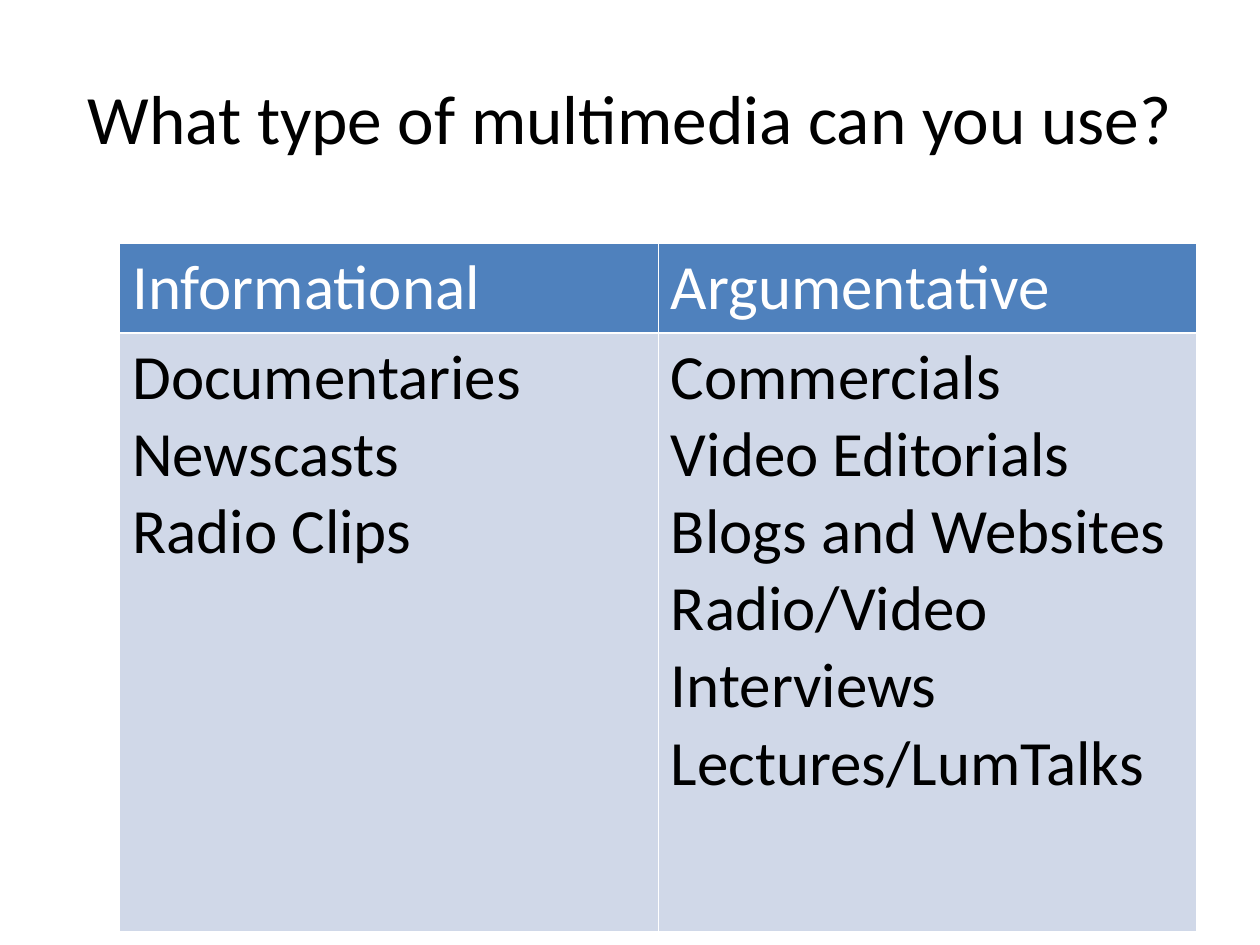
from pptx import Presentation
from pptx.dml.color import RGBColor
from pptx.enum.text import MSO_ANCHOR, PP_ALIGN
from pptx.util import Pt

CENTER = PP_ALIGN.CENTER
MIDDLE = MSO_ANCHOR.MIDDLE
FONT = "Calibri"
COLORS = {"black": "000000", "white": "FFFFFF", "header": "4F81BD", "body": "D0D8E8"}

MEDIA = {
    "Informational": ["Documentaries", "Newscasts", "Radio Clips"],
    "Argumentative": [
        "Commercials",
        "Video Editorials",
        "Blogs and Websites",
        "Radio/Video Interviews",
        "Lectures/LumTalks",
    ],
}


def format_text(text_frame, size, color):
    for paragraph in text_frame.paragraphs:
        for run in paragraph.runs:
            run.font.name = FONT
            run.font.size = Pt(size)
            run.font.bold = False
            run.font.color.rgb = RGBColor.from_string(COLORS[color])


presentation = Presentation()
presentation.slide_width = Pt(720)
presentation.slide_height = Pt(540)
slide = presentation.slides.add_slide(presentation.slide_layouts[6])

# Title
title = slide.shapes.add_textbox(Pt(36), Pt(21.6), Pt(648), Pt(90))
title_frame = title.text_frame
title_frame.word_wrap = True
title_frame.vertical_anchor = MIDDLE
title_frame.text = "What type of multimedia can you use?"
title_frame.paragraphs[0].alignment = CENTER
format_text(title_frame, 39.6, "black")

# Table: the default style supplies the white borders
table = slide.shapes.add_table(
    2, len(MEDIA), Pt(68.4), Pt(139.2), Pt(615.6), Pt(393.2)
).table
table.rows[0].height = Pt(51.2)
table.rows[1].height = Pt(342)

# One column for each kind of media
for column, (kind, examples) in enumerate(MEDIA.items()):
    rows = [(kind, "header", "white"), ("\n".join(examples), "body", "black")]
    for row, (text, fill, color) in enumerate(rows):
        cell = table.cell(row, column)
        cell.fill.solid()
        cell.fill.fore_color.rgb = RGBColor.from_string(COLORS[fill])
        cell.text_frame.text = text
        format_text(cell.text_frame, 36, color)

presentation.save("out.pptx")
